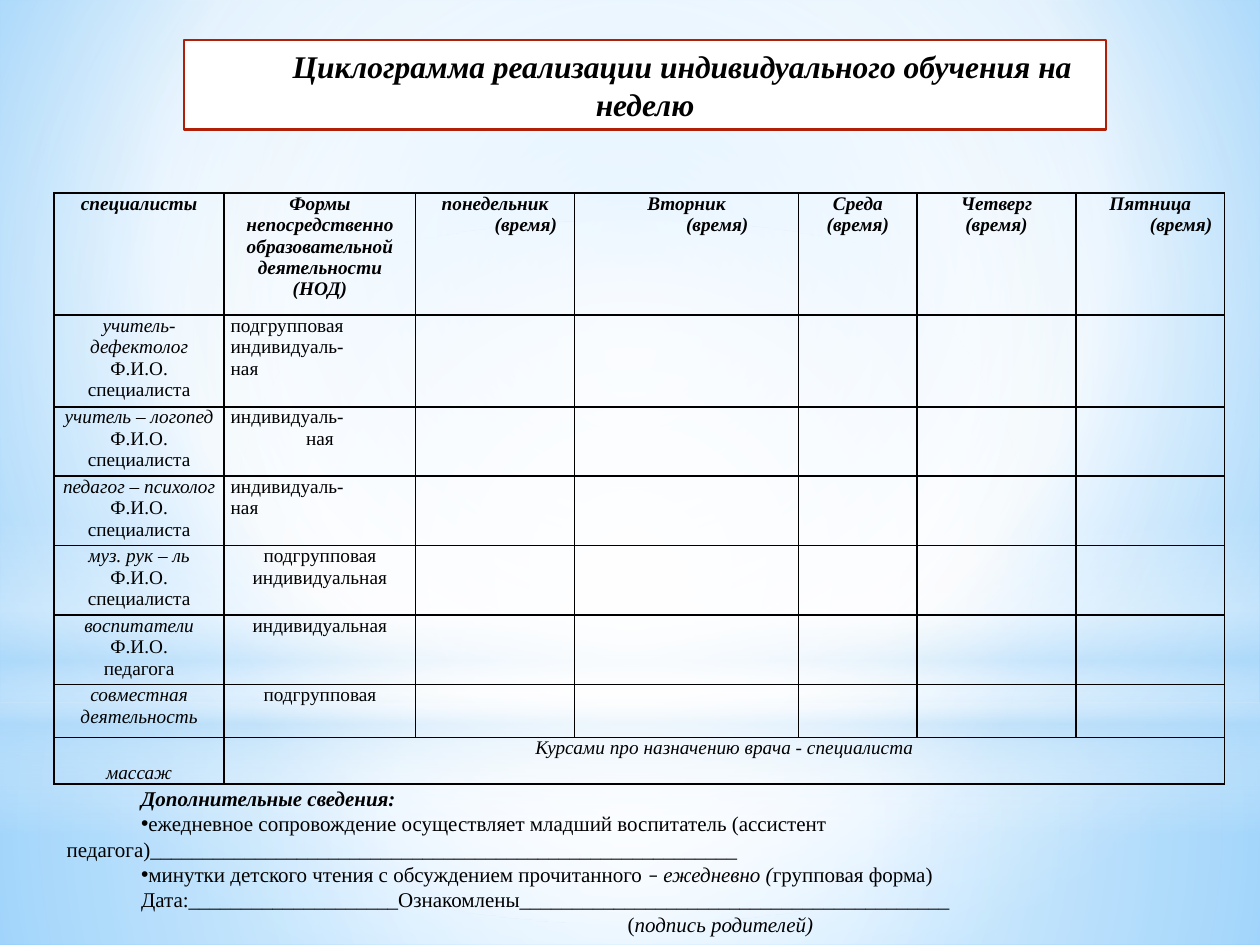
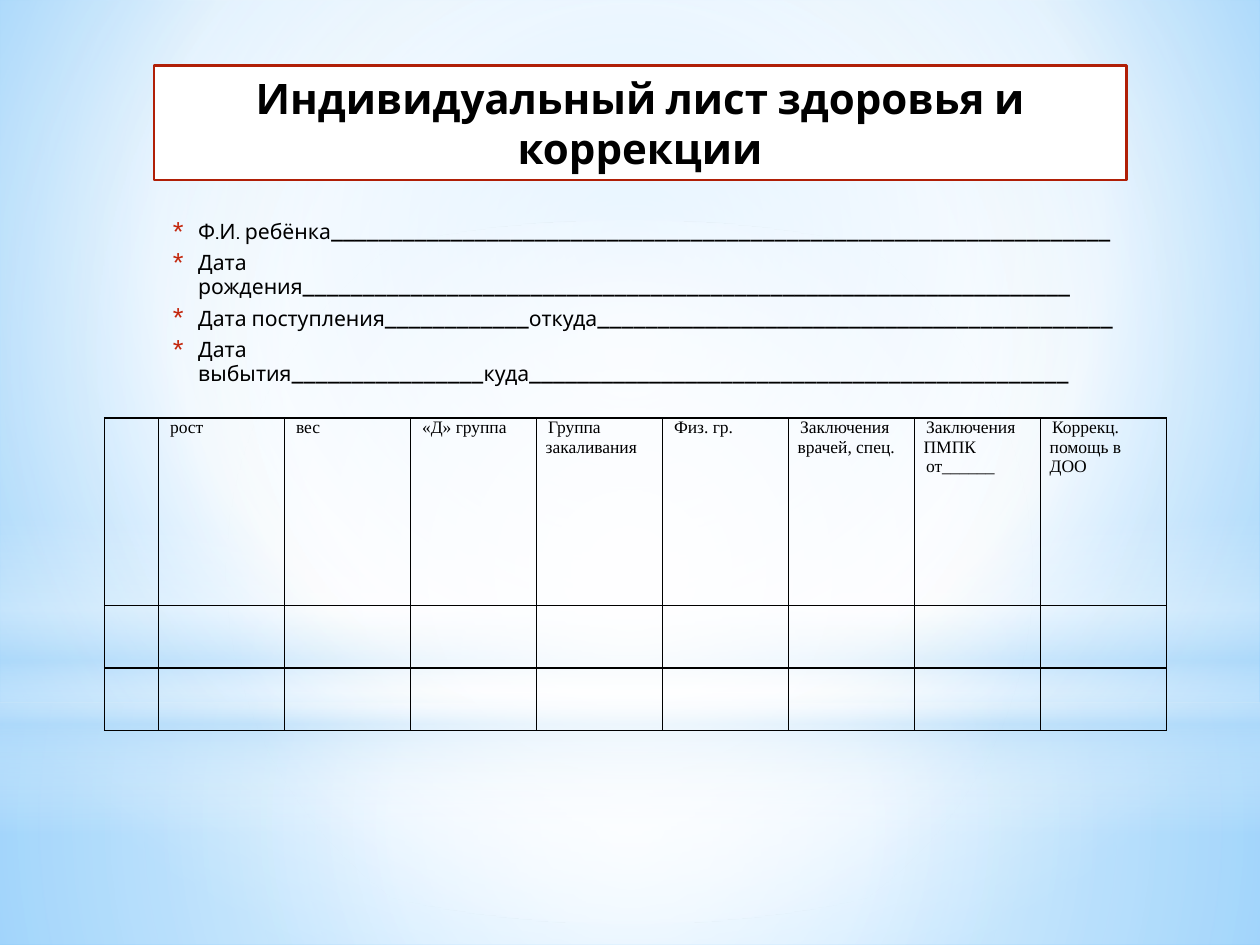
"""Build two slides of forms for individual child support: a weekly plan and a health sheet."""
from dataclasses import dataclass

from lxml import etree
from pptx import Presentation
from pptx import util as u
from pptx.dml.color import RGBColor
from pptx.enum import shapes, text
from pptx.oxml.ns import qn

Cm, Pt = u.Cm, u.Pt
CENTER, LEFT = text.PP_ALIGN.CENTER, text.PP_ALIGN.LEFT
MIDDLE, TOP = text.MSO_ANCHOR.MIDDLE, text.MSO_ANCHOR.TOP


@dataclass(frozen=True)
class Theme:
    ink: str = "000000"
    paper: str = "FFFFFF"
    frame: str = "B01F07"
    bullet: str = "C3260C"
    mist: str = "B4DCFA"
    sky: str = "9ED5FF"
    deep: str = "5BB9FF"
    serif: str = "Times New Roman"
    sans: str = "Cabin"
    plan_title: float = 18
    sheet_title: float = 24
    plan_cell: float = 11
    plan_note: float = 12
    sheet_note: float = 12.1
    sheet_cell: float = 10


theme = Theme()


def paint_gradient(fill, owner, stops, focus=None):
    """Give a fill its stops (position, colour, opacity), circular around a focus or vertical."""
    fill.gradient()
    gradient = owner.find(".//" + qn("a:gradFill"))
    for child in list(gradient):
        gradient.remove(child)
    stop_list = etree.SubElement(gradient, qn("a:gsLst"))
    for position, colour, opacity in stops:
        stop = etree.SubElement(stop_list, qn("a:gs"), pos=str(position * 1000))
        tint = etree.SubElement(stop, qn("a:srgbClr"), val=colour)
        etree.SubElement(tint, qn("a:alpha"), val=str(opacity * 1000))
    if focus:
        circle = etree.SubElement(gradient, qn("a:path"), path="circle")
        sides = {side: str(share * 1000) for side, share in zip("ltrb", focus)}
        etree.SubElement(circle, qn("a:fillToRect"), **sides)
    else:
        etree.SubElement(gradient, qn("a:lin"), ang="5400000", scaled="0")


def write(para, spans, font, layout, indent=0, margin=0, bullet=None, bullet_scale=None):
    """Fill a paragraph with (words, font changes) spans and set its layout."""
    for name, value in layout.items():
        setattr(para, name, value)
    for words, changes in spans:
        span = para.add_run()
        span.text = words
        span.font.color.rgb = RGBColor.from_string(theme.ink)
        for name, value in {**font, **changes}.items():
            setattr(span.font, name, value)
    props = para._p.get_or_add_pPr()
    props.set("marL", str(Cm(margin)))
    props.set("indent", str(Cm(indent)))
    if bullet_scale:
        colour = etree.SubElement(props, qn("a:buClr"))
        etree.SubElement(colour, qn("a:srgbClr"), val=theme.bullet)
        etree.SubElement(props, qn("a:buSzPct"), val=str(bullet_scale * 1000))
    if bullet:
        etree.SubElement(props, qn("a:buChar"), char=bullet)
    else:
        etree.SubElement(props, qn("a:buNone"))


deck = Presentation()
deck.slide_width, deck.slide_height = Cm(25.4), Cm(19.05)
master = deck.slide_master
plan, sheet = [deck.slides.add_slide(deck.slide_layouts[1]) for _ in range(2)]

paint_gradient(master.background.fill, master.element,
               [(0, theme.sky, 100), (60, theme.paper, 100), (100, theme.deep, 100)],
               (20, 10, 20, 60))
middle = (50, 50, 50, 50)
RECT, OVAL = shapes.MSO_SHAPE.RECTANGLE, shapes.MSO_SHAPE.OVAL
bands = [
    (RECT, 14.17, 4.88, middle,
     [(0, theme.paper, 91), (37, theme.paper, 76), (100, theme.mist, 79)]),
    (RECT, 0, 14.17, middle,
     [(0, theme.paper, 89), (48, theme.paper, 62), (100, theme.mist, 79)]),
    (RECT, 10.46, 6.35, None,
     [(0, theme.paper, 0), (29, theme.paper, 30), (45, theme.mist, 40),
      (55, theme.paper, 26), (65, theme.mist, 60), (100, theme.paper, 0)]),
    (OVAL, 4.45, 14.17, middle, [(0, theme.paper, 100), (56, theme.paper, 0)]),
]
for order, (kind, top, height, focus, stops) in enumerate(bands):
    band = plan.shapes.add_shape(kind, 0, Cm(top), deck.slide_width, Cm(height))
    band.shadow.inherit = False
    band.line.fill.background()
    paint_gradient(band.fill, band.element, stops, focus)
    master.shapes.element.insert(2 + order, band.element)

titles = [
    (plan, (3.71, 0.81, 18.59, 1.8), "Циклограмма реализации индивидуального обучения на неделю",
     {"name": theme.serif, "size": Pt(theme.plan_title), "bold": True, "italic": True}, 1.5),
    (sheet, (3.1, 1.32, 19.61, 2.31), "Индивидуальный лист здоровья и коррекции",
     {"name": theme.sans, "size": Pt(theme.sheet_title), "bold": True}, 0),
]
for page, place, words, font, indent in titles:
    title = page.shapes.title
    title.left, title.top, title.width, title.height = map(Cm, place)
    title.fill.solid()
    title.fill.fore_color.rgb = RGBColor.from_string(theme.paper)
    title.line.color.rgb = RGBColor.from_string(theme.frame)
    title.line.width = Pt(1.25)
    title.text_frame.auto_size = text.MSO_AUTO_SIZE.NONE
    title.text_frame.vertical_anchor = MIDDLE
    write(title.text_frame.paragraphs[0], [(words, {})], font, {"alignment": CENTER}, indent)

italic = {"italic": True}
plan_notes = [
    ([("Дополнительные сведения:", {"bold": True, "italic": True})], {"indent": 1.5}),
    ([("ежедневное сопровождение осуществляет младший воспитатель (ассистент педагога)" + "_" * 56, {})],
     {"indent": 1.5, "bullet": "•"}),
    ([("минутки детского чтения с обсуждением прочитанного ", {}), ("– ", {"name": "Calibri"}),
      ("ежедневно (", italic), ("групповая форма)", {})], {"indent": 1.5, "bullet": "•"}),
    ([("Дата:" + "_" * 20 + "Ознакомлены" + "_" * 41, {})], {"indent": 1.5}),
    ([("(", {}), ("подпись родителей)", italic)], {"indent": 11.31}),
]
star = {"margin": 0.64, "indent": -0.51, "bullet": "*", "bullet_scale": 130}
sheet_notes = [([(words, {})], star) for words in (
    "Ф.И. ребёнка" + "_" * 65,
    "Дата рождения" + "_" * 64,
    "Дата поступления" + "_" * 12 + "откуда" + "_" * 43,
    "Дата выбытия" + "_" * 16 + "куда" + "_" * 45,
)]
bodies = [
    (plan, (1.09, 15.7, 23.39, 3.33), MIDDLE, plan_notes,
     {"name": theme.serif, "size": Pt(theme.plan_note)}, {"space_before": Pt(0)}),
    (sheet, (3.1, 4.32, 19.79, 3.81), TOP, sheet_notes,
     {"name": theme.sans, "size": Pt(theme.sheet_note)},
     {"line_spacing": 0.93, "space_before": Pt(2), "space_after": Pt(2.5)}),
]
for page, place, anchor, notes, font, layout in bodies:
    body = page.placeholders[1]
    body.left, body.top, body.width, body.height = map(Cm, place)
    body.text_frame.auto_size = text.MSO_AUTO_SIZE.NONE
    body.text_frame.vertical_anchor = anchor
    for number, (spans, options) in enumerate(notes):
        para = body.text_frame.add_paragraph() if number else body.text_frame.paragraphs[0]
        write(para, spans, font, {"alignment": LEFT, **layout}, **options)

plan_rows = [
    ["специалисты", "Формы непосредственно образовательной деятельности (НОД)",
     "понедельник\n(время)", "Вторник\n(время)", "Среда\n(время)", "Четверг\n(время)",
     "Пятница\n(время)"],
    ["учитель-дефектолог\nФ.И.О.\nспециалиста", "подгрупповая\nиндивидуаль-\nная"],
    ["учитель – логопед\nФ.И.О.\nспециалиста", "индивидуаль-\nная"],
    ["педагог – психолог\nФ.И.О.\nспециалиста", "индивидуаль-\nная"],
    ["муз. рук – ль\nФ.И.О.\nспециалиста", "подгрупповая\nиндивидуальная"],
    ["воспитатели\nФ.И.О.\nпедагога", "индивидуальная"],
    ["совместная деятельность", "подгрупповая"],
    ["массаж", "Курсами про назначению врача - специалиста"],
]
sheet_rows = [
    ["", "рост", "вес", "«Д» группа", "Группа закаливания", "Физ. гр.",
     "Заключения врачей, спец.", "Заключения ПМПК\nот______", "Коррекц. помощь в ДОО"],
    [], [],
]
tables = [
    (plan, (1.09, 3.89), [3.43, 3.86, 3.2, 4.52, 2.39, 3.2, 3],
     [2.46, 1.85] + [1.4] * 4 + [1.07, 0.94], plan_rows, 0.13, theme.plan_cell),
    (sheet, (2.11, 8.43), [1.09] + [2.54] * 8, [3.78, 1.26, 1.26], sheet_rows, 0.18,
     theme.sheet_cell),
]
for page, (left, top), widths, heights, rows, inset, size in tables:
    grid = page.shapes.add_table(len(heights), len(widths), Cm(left), Cm(top),
                                 Cm(sum(widths)), Cm(sum(heights))).table
    grid.first_row = grid.horz_banding = False
    for column, width in zip(grid.columns, widths):
        column.width = Cm(width)
    for row, height in zip(grid.rows, heights):
        row.height = Cm(height)
    if page is plan:
        grid.cell(7, 1).merge(grid.cell(7, 6))
        grid.cell(7, 0).vertical_anchor = text.MSO_ANCHOR.BOTTOM
    for row, height in enumerate(heights):
        for column, width in enumerate(widths):
            cell = grid.cell(row, column)
            cell.margin_left = cell.margin_right = Cm(inset)
            cell.margin_top = cell.margin_bottom = 0
            props = cell._tc.get_or_add_tcPr()
            for side in ("a:lnL", "a:lnR", "a:lnT", "a:lnB"):
                border = etree.SubElement(props, qn(side), w=str(Pt(1)))
                ink = etree.SubElement(border, qn("a:solidFill"))
                etree.SubElement(ink, qn("a:srgbClr"), val=theme.ink)
            cell.fill.background()
            lines = rows[row][column].split("\n") if column < len(rows[row]) else []
            for number, words in enumerate(filter(None, lines)):
                para = cell.text_frame.add_paragraph() if number else cell.text_frame.paragraphs[0]
                font = {"name": theme.serif, "size": Pt(size)}
                align, indent = LEFT, 0.05
                if page is plan:
                    heading = row == 0
                    font["bold"] = heading
                    font["italic"] = heading or row == 7 or (column == 0 and number == 0)
                    flush = column == 1 and row in (1, 2, 3) and (row, number) != (2, 1)
                    align = LEFT if flush else CENTER
                    indent = 1.24 if number and column in (2, 3, 6) else 0
                write(para, [(words, {})], font, {"alignment": align}, indent)

deck.save("out.pptx")
